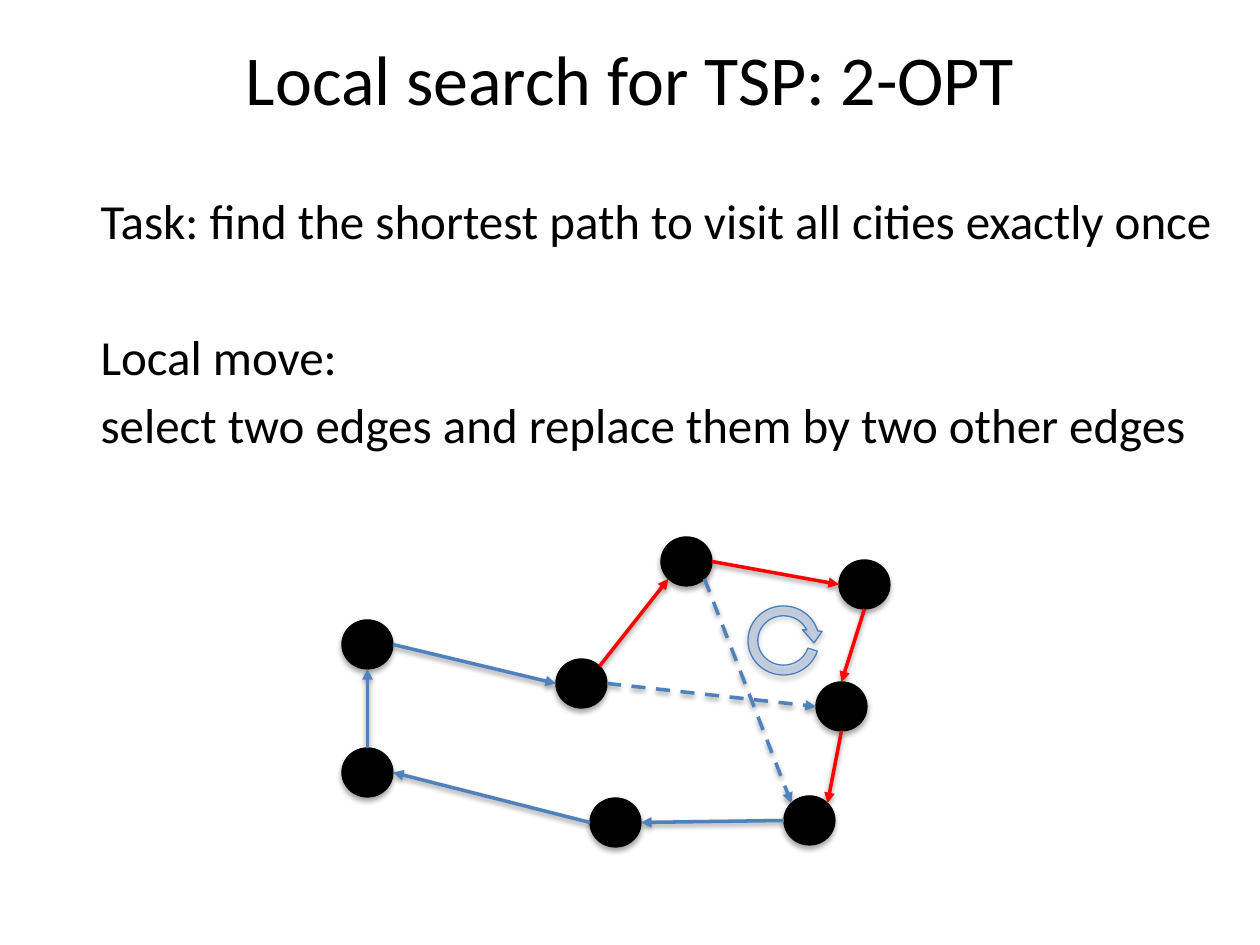
import math

import lxml.etree
import pptx
import pptx.dml.color
import pptx.enum.dml
import pptx.enum.shapes
import pptx.enum.text
import pptx.oxml.ns
import pptx.util

EMU_PER_PX = 914400 / 126
FONT = "Calibri"
BLACK, BLUE, DARK_BLUE, RED = "000000", "4F81BD", "4B7EBC", "FF0000"
CITY_WIDTH, CITY_HEIGHT = 51, 49
CITIES = {
    "right": (816, 682),
    "upper left": (342, 620),
    "top right": (839, 560),
    "lower left": (342, 748),
    "bottom": (590, 798),
    "centre": (556, 659),
    "top": (661, 537),
    "bottom right": (784, 796),
}
EDGES = [
    ("lower left", 0, "upper left", 4, BLUE, False),
    ("upper left", 6, "centre", 2, BLUE, False),
    ("centre", 6, "right", 2, BLUE, True),
    ("top right", 4, "right", 0, RED, False),
    ("bottom right", 2, "bottom", 6, BLUE, False),
    ("top", 5, "bottom right", 1, BLUE, True),
    ("top", 6, "top right", 2, RED, False),
    ("bottom", 2, "lower left", 6, BLUE, False),
    ("centre", 7, "top", 3, RED, False),
    ("right", 4, "bottom right", 7, RED, False),
]


def px(length):
    """Turn pixels into EMU."""
    return pptx.util.Emu(round(length * EMU_PER_PX))


def rgb(color):
    """Turn a hex string into a colour."""
    return pptx.dml.color.RGBColor.from_string(color)


def add_xml(parent, tag, **attributes):
    """Append a DrawingML child element and return it."""
    name = pptx.oxml.ns.qn(f"a:{tag}")
    return lxml.etree.SubElement(parent, name, {key: str(value) for key, value in attributes.items()})


def add_shadow(shape, opacity, distance):
    """Give a shape or connector a soft shadow below it."""
    effects = add_xml(shape.element.spPr, "effectLst")
    shadow = add_xml(effects, "outerShdw", blurRad=pptx.util.Pt(3.1),
                     dist=pptx.util.Pt(distance), dir=5400000, rotWithShape=0)
    color = add_xml(shadow, "srgbClr", val=BLACK)
    add_xml(color, "alpha", val=opacity * 1000)


def place(shape, left, top, width, height):
    """Position a placeholder in pixels."""
    shape.left, shape.top, shape.width, shape.height = map(px, (left, top, width, height))


def add_run(paragraph, text, size):
    """Add one formatted run to a paragraph."""
    run = paragraph.add_run()
    run.text = text
    run.font.name = FONT
    run.font.size = pptx.util.Pt(size)
    run.font.color.rgb = rgb(BLACK)


def fill_title(title, text):
    """Write the centred slide title."""
    place(title, 63, 33, 1134, 89)
    frame = title.text_frame
    frame.auto_size = pptx.enum.text.MSO_AUTO_SIZE.NONE
    frame.vertical_anchor = pptx.enum.text.MSO_ANCHOR.MIDDLE
    paragraph = frame.paragraphs[0]
    paragraph.alignment = pptx.enum.text.PP_ALIGN.CENTER
    add_run(paragraph, text, 40)


def fill_body(body, lines):
    """Write unbulleted body lines, each with its space before in points."""
    place(body, 25, 122, 1235, 776)
    frame = body.text_frame
    frame.auto_size = pptx.enum.text.MSO_AUTO_SIZE.NONE
    frame.margin_top = px(69)
    for index, (text, space) in enumerate(lines):
        paragraph = frame.add_paragraph() if index else frame.paragraphs[0]
        paragraph.level = 1
        paragraph.space_before = pptx.util.Pt(space)
        add_run(paragraph, text, 28)
        properties = paragraph._p.get_or_add_pPr()
        properties.set("marL", str(px(63)))
        properties.set("indent", "0")
        add_xml(properties, "buNone")


def add_shape(shapes, kind, box, fill, line):
    """Add a preset shape with a thin outline."""
    shape = shapes.add_shape(kind, *map(px, box))
    shape.fill.solid()
    shape.fill.fore_color.rgb = rgb(fill)
    shape.line.color.rgb = rgb(line)
    shape.line.width = pptx.util.Pt(0.75)
    add_shadow(shape, 35, 1.8)
    return shape


def ellipse_site(city, site):
    """Return the point of one of the eight sites, counted anticlockwise from the top."""
    angle = math.radians(45 * site)
    x = city.left + city.width / 2 * (1 - math.sin(angle))
    y = city.top + city.height / 2 * (1 - math.cos(angle))
    return round(x), round(y)


def add_edge(shapes, start, start_site, end, end_site, color, dashed):
    """Join two cities with an arrow glued to their connection sites."""
    connector = shapes.add_connector(
        pptx.enum.shapes.MSO_CONNECTOR.STRAIGHT,
        *ellipse_site(start, start_site), *ellipse_site(end, end_site))
    joints = connector.element.nvCxnSpPr.cNvCxnSpPr
    add_xml(joints, "stCxn", id=start.shape_id, idx=start_site)
    add_xml(joints, "endCxn", id=end.shape_id, idx=end_site)
    connector.line.color.rgb = rgb(color)
    connector.line.width = pptx.util.Pt(2)
    if dashed:
        connector.line.dash_style = pptx.enum.dml.MSO_LINE.DASH
    add_xml(connector.line._get_or_add_ln(), "tailEnd", type="triangle")
    add_shadow(connector, 38, 1.6)


def add_tour(slide):
    """Draw the cities and the edges between them as one group."""
    shapes = slide.shapes.add_group_shape().shapes
    oval = pptx.enum.shapes.MSO_SHAPE.OVAL
    cities = {
        name: add_shape(shapes, oval, (*corner, CITY_WIDTH, CITY_HEIGHT), BLACK, BLACK)
        for name, corner in CITIES.items()
    }
    for start, start_site, end, end_site, color, dashed in EDGES:
        add_edge(shapes, cities[start], start_site, cities[end], end_site, color, dashed)


def add_rotation_arrow(slide):
    """Draw the translucent arrow that shows the tour direction."""
    arrow = add_shape(slide.shapes, pptx.enum.shapes.MSO_SHAPE.CIRCULAR_ARROW,
                      (743, 601, 81, 79), BLUE, DARK_BLUE)
    for index, value in enumerate((0.125, 14.18, 204.58, 10.48, 0.125)):
        arrow.adjustments[index] = value
    color = arrow.element.spPr.find(pptx.oxml.ns.qn("a:solidFill"))[0]
    add_xml(color, "alpha", val=24000)


def main():
    """Build and save the slide."""
    presentation = pptx.Presentation()
    presentation.slide_width, presentation.slide_height = px(1260), px(945)
    slide = presentation.slides.add_slide(presentation.slide_layouts[1])
    fill_title(slide.shapes.title, "Local search for TSP: 2-OPT")
    fill_body(slide.placeholders[1], [
        ("Task: find the shortest path to visit all cities exactly once", 0),
        ("Local move:", 44),
        ("select two edges and replace them by two other edges", 5),
    ])
    add_tour(slide)
    add_rotation_arrow(slide)
    presentation.save("out.pptx")


if __name__ == "__main__":
    main()
